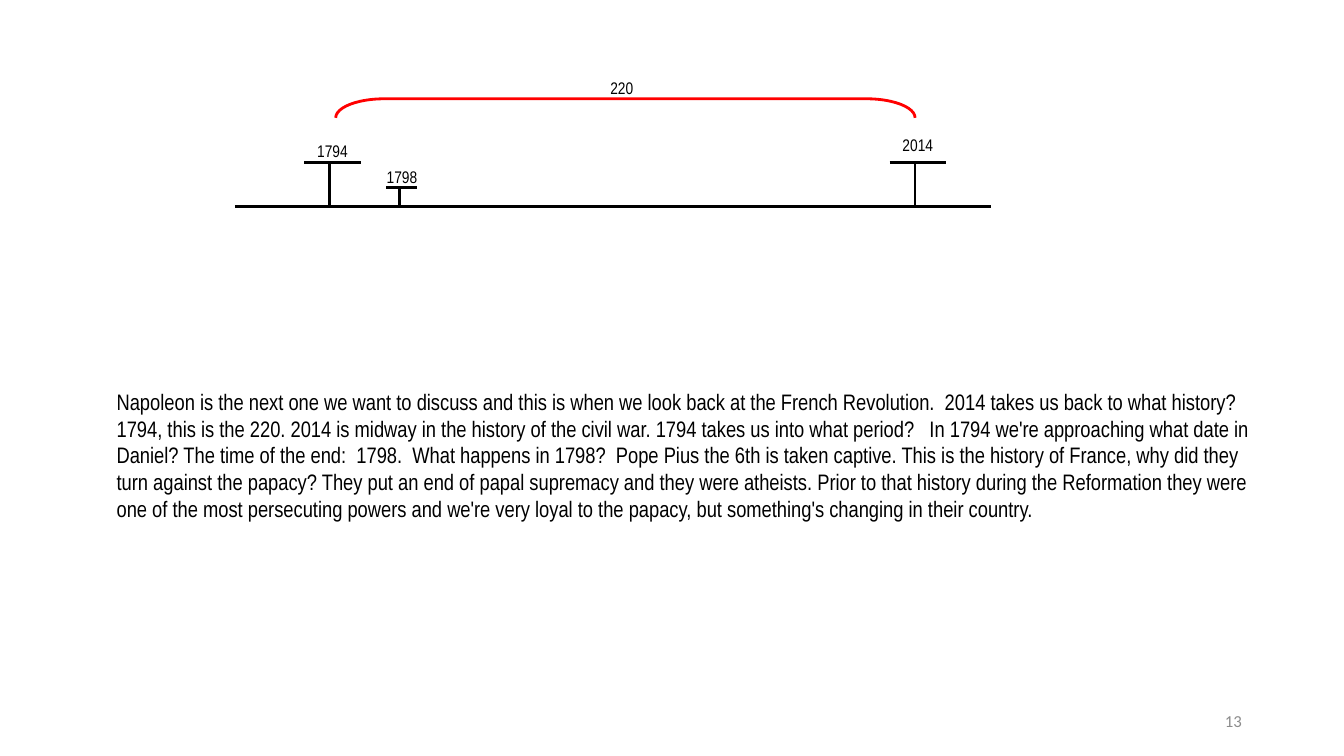
import pptx
import pptx.dml.color
import pptx.enum.shapes
import pptx.enum.text
import pptx.oxml.ns
import pptx.util
from lxml import etree
from pptx.util import Cm

BLACK = pptx.dml.color.RGBColor(0x00, 0x00, 0x00)
RED = pptx.dml.color.RGBColor(0xFF, 0x00, 0x00)
GREY = pptx.dml.color.RGBColor(0x8C, 0x8C, 0x8C)
ALIGN = pptx.enum.text.PP_ALIGN
ANCHOR = pptx.enum.text.MSO_ANCHOR

LABEL_WIDTH = 1.42
LABEL_OFFSET = 0.64
MILESTONES = [
    # year, stem position, stem height, label height, cap offset, cap width
    ("1794", 2.39, 1.12, 0.64, 0.64, 1.42),
    ("1798", 4.14, 0.48, 0.64, 0.33, 0.79),
    ("2014", 17.14, 1.12, 0.79, 0.64, 1.42),
]
BODY = (
    "Napoleon is the next one we want to discuss and this is when we look back at the "
    "French Revolution.  2014 takes us back to what history? 1794, this is the 220. 2014 is "
    "midway in the history of the civil war. 1794 takes us into what period?   In 1794 we're "
    "approaching what date in Daniel? The time of the end:  1798.  What happens in 1798?  "
    "Pope Pius the 6th is taken captive. This is the history of France, why did they turn "
    "against the papacy? They put an end of papal supremacy and they were atheists. Prior to "
    "that history during the Reformation they were one of the most persecuting powers and "
    "we're very loyal to the papacy, but something's changing in their country."
)


def add_text(page, box, text, size, font="Arial Narrow", color=BLACK,
             align=ALIGN.LEFT, anchor=ANCHOR.TOP, inset=None):
    frame = page.shapes.add_textbox(*map(Cm, box)).text_frame
    frame.word_wrap = True
    frame.vertical_anchor = anchor
    if inset is not None:
        frame.margin_left = frame.margin_right = Cm(inset)
        frame.margin_top = frame.margin_bottom = Cm(inset)
    para = frame.paragraphs[0]
    para.text = text
    para.alignment = align
    para.font.name = font
    para.font.size = pptx.util.Pt(size)
    para.font.color.rgb = color


def add_label(page, left, top, height, text):
    add_text(page, (left, top, LABEL_WIDTH, height), text, 12,
             align=ALIGN.CENTER, inset=0.1)


def add_line(page, start, end):
    line = page.shapes.add_connector(
        pptx.enum.shapes.MSO_CONNECTOR.STRAIGHT, *map(Cm, (*start, *end)))
    line.line.color.rgb = BLACK
    line.line.width = pptx.util.Pt(2)
    properties = line._element.spPr
    etree.SubElement(properties, pptx.oxml.ns.qn("a:effectLst"))


def add_span(page, box, text):
    left, top, width, height = box
    center, middle = left + width / 2, top + height / 2
    bracket = page.shapes.add_shape(
        pptx.enum.shapes.MSO_SHAPE.LEFT_BRACKET,
        Cm(center - height / 2), Cm(middle - width / 2), Cm(height), Cm(width))
    bracket.rotation = 90
    bracket.adjustments[0] = 2.556
    bracket.shadow.inherit = False
    bracket.fill.background()
    bracket.line.color.rgb = RED
    bracket.line.width = pptx.util.Pt(2)
    add_label(page, center - 0.8, top - 0.64, 0.79, text)


def add_timeline(page, box):
    left, top, width, height = box
    base = top + height
    add_line(page, (left, base), (left + width, base))
    for year, position, stem, label_height, cap_offset, cap_width in MILESTONES:
        x, cap = left + position, base - stem
        add_line(page, (x, cap), (x, base))
        add_line(page, (x - cap_offset, cap), (x - cap_offset + cap_width, cap))
        add_label(page, x - LABEL_OFFSET, cap - label_height, label_height, year)
    add_span(page, (left + 2.54, top + 0.64, 14.6, 0.48), "220")


def main():
    deck = pptx.Presentation()
    deck.slide_width, deck.slide_height = Cm(33.87), Cm(19.05)
    page = deck.slides.add_slide(deck.slide_layouts[6])
    add_timeline(page, (5.92, 1.85, 19.05, 3.36))
    add_text(page, (2.69, 9.65, 29.08, 4.52), BODY, 16)
    add_text(page, (23.93, 17.65, 7.62, 1.02), "13", 12, "Calibri", GREY,
             ALIGN.RIGHT, ANCHOR.MIDDLE)
    deck.save("out.pptx")


if __name__ == "__main__":
    main()
